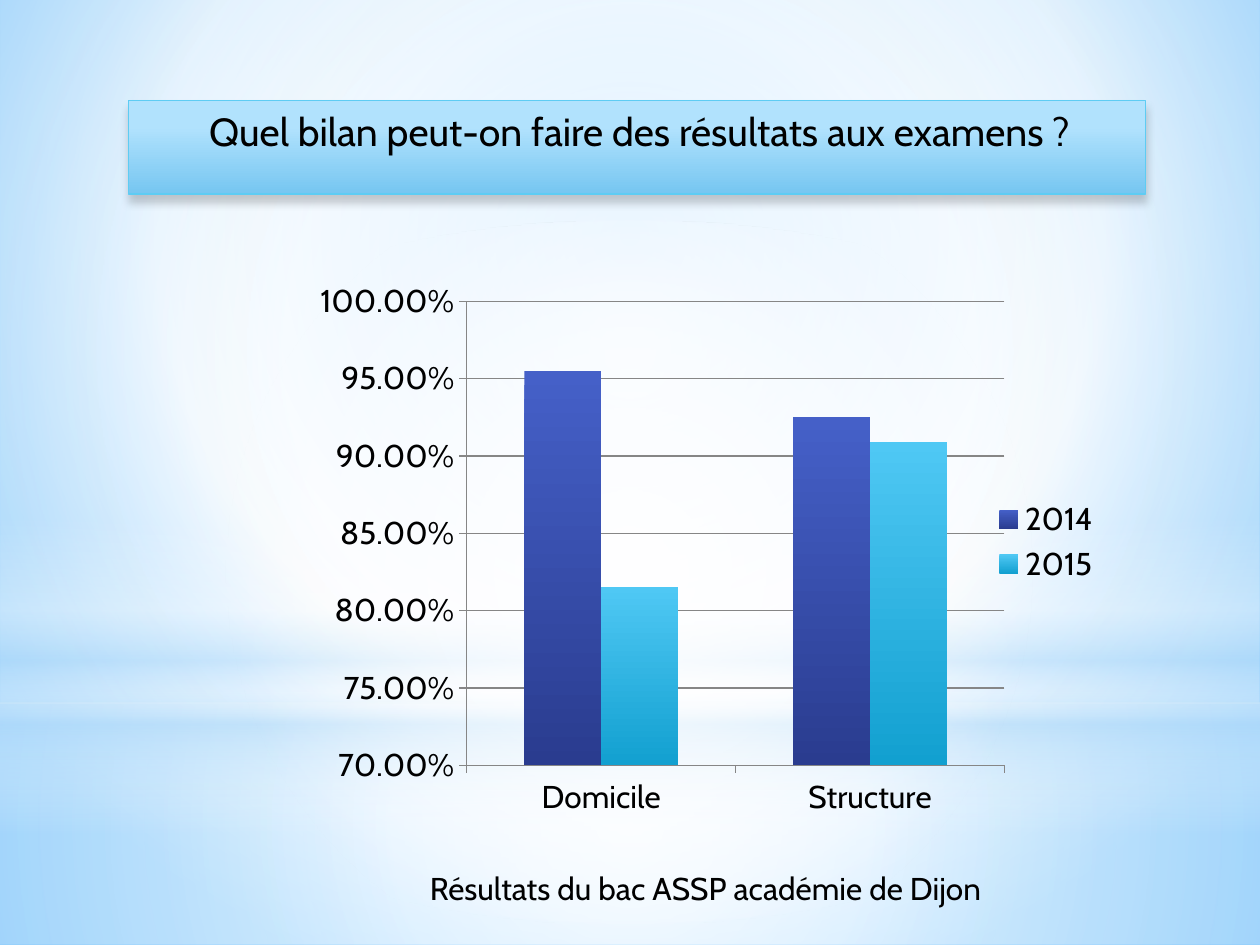
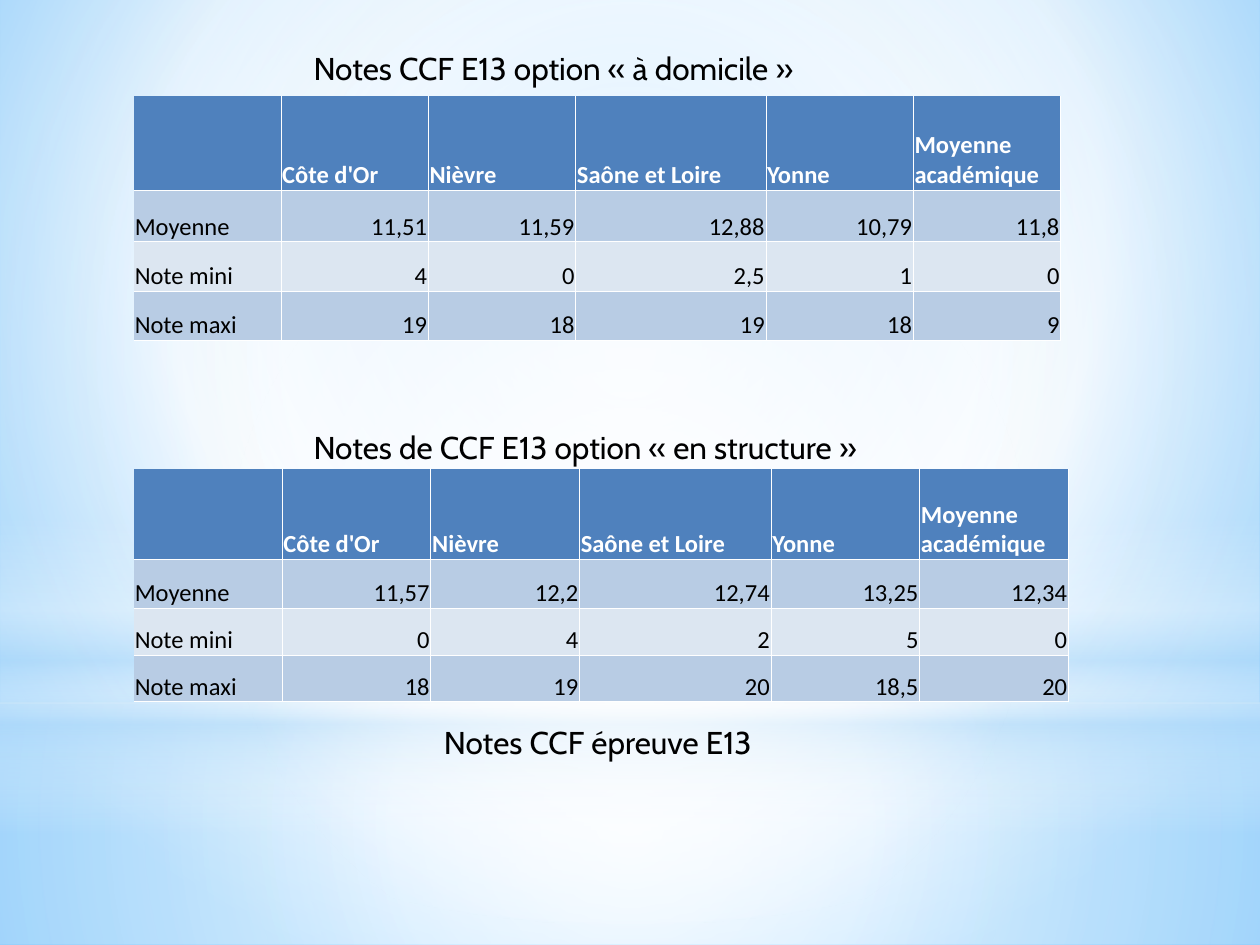
from lxml import etree
from pptx import Presentation
from pptx import util as u
from pptx.chart import data as cd
from pptx.dml.color import RGBColor
from pptx.enum import chart as ec, shapes, text
from pptx.oxml import parse_xml
from pptx.oxml.ns import nsdecls, qn

COLORS = dict(black="000000", white="FFFFFF", mist="B4DCFA", edge="5ECCF3",
              header="4F81BD", band="B8CCE4", pale="DCE6F1", grid="868686")
W, MIST = COLORS["white"], COLORS["mist"]
CENTRE = (50, 50, 50, 50)
BODY = dict(name="Cabin", size=u.Pt(18), bold=False)
CELL = dict(name="Calibri", size=u.Pt(14))
PLAIN_TABLE = "{2D5ABB26-0587-4C30-8999-92F81FD0307C}"

BACKDROP = [(0, "9ED5FF", 100), (60, W, 100), (100, "5BB9FF", 100)]
SCENERY = [
    ("RECTANGLE", (0, 5.58, 10, 1.92), [(0, W, 91), (37, W, 76), (100, MIST, 79)], CENTRE),
    ("RECTANGLE", (0, 0, 10, 5.58), [(0, W, 89), (48, W, 62), (100, MIST, 79)], CENTRE),
    ("RECTANGLE", (0, 4.12, 10, 2.5),
     [(0, W, 0), (29, W, 30), (45, MIST, 40), (55, W, 26), (65, MIST, 60), (100, W, 0)], None),
    ("OVAL", (0, 1.75, 10, 5.58), [(0, W, 100), (56, W, 0)], CENTRE),
]
BANNER = [(28, "B1E2FD", 100), (100, "76C6F1", 100)]
SERIES = [
    ("2014", (0.955, 0.925), [(0, "4560C8", 100), (100, "2A3C8F", 100)]),
    ("2015", (0.815, 0.909), [(0, "4FC8F4", 100), (100, "12A0D0", 100)]),
]

HEADS = ["", "Côte d'Or", "Nièvre", "Saône et Loire", "Yonne", "Moyenne académique"]
HOME_MARKS = [
    HEADS,
    ["Moyenne", "11,51", "11,59", "12,88", "10,79", "11,8"],
    ["Note mini", "4", "0", "2,5", "1", "0"],
    ["Note maxi", "19", "18", "19", "18", "9"],
]
CENTRE_MARKS = [
    HEADS,
    ["Moyenne", "11,57", "12,2", "12,74", "13,25", "12,34"],
    ["Note mini", "0", "4", "2", "5", "0"],
    ["Note maxi", "18", "19", "20", "18,5", "20"],
]


def box(values):
    return [u.Inches(v) for v in values]


def rgb(name):
    return RGBColor.from_string(COLORS[name])


def set_font(font, values, color="black"):
    for key, value in values.items():
        setattr(font, key, value)
    font.color.rgb = rgb(color)


def paint_gradient(fill, parent, stops, focus=None):
    fill.background()
    gs = "".join(f'<a:gs pos="{pos * 1000}"><a:srgbClr val="{color}">'
                 f'<a:alpha val="{alpha * 1000}"/></a:srgbClr></a:gs>'
                 for pos, color, alpha in stops)
    way = '<a:lin ang="5400000" scaled="0"/>'
    if focus:
        sides = " ".join(f'{k}="{v * 1000}"' for k, v in zip("ltrb", focus))
        way = f'<a:path path="circle"><a:fillToRect {sides}/></a:path>'
    grad = parse_xml(f'<a:gradFill {nsdecls("a")} rotWithShape="1">'
                     f'<a:gsLst>{gs}</a:gsLst>{way}</a:gradFill>')
    parent.replace(parent.find(qn("a:noFill")), grad)


def dress_master(prs, s):
    master = prs.slide_master
    fill = master.background.fill
    fill.background()
    bg = master.element.find(f".//{qn('p:bgPr')}")
    paint_gradient(fill, bg, BACKDROP, (20, 10, 20, 60))
    tree = master.shapes._spTree
    for i, (kind, at, stops, focus) in enumerate(SCENERY):
        sp = s.shapes.add_shape(shapes.MSO_SHAPE[kind], *box(at))
        sp.shadow.inherit = False
        sp.line.fill.background()
        paint_gradient(sp.fill, sp._element.spPr, stops, focus)
        sp._element.nvSpPr.cNvPr.set("id", str(100 + i))
        tree.insert(2 + i, sp._element)


def add_banner(s, words):
    sp = s.placeholders[1]
    sp.left, sp.top, sp.width, sp.height = box((1.02, 0.8, 8.07, 0.74))
    sp.line.color.rgb = rgb("edge")
    sp.line.width = u.Pt(0.75)
    paint_gradient(sp.fill, sp._element.spPr, BANNER)
    sp._element.spPr.append(parse_xml(
        f'<a:effectLst {nsdecls("a")}><a:outerShdw blurRad="63500" dist="50800" dir="5400000">'
        '<a:srgbClr val="000000"><a:alpha val="20000"/></a:srgbClr></a:outerShdw></a:effectLst>'))
    tf = sp.text_frame
    tf.auto_size = text.MSO_AUTO_SIZE.NONE
    tf.vertical_anchor = text.MSO_ANCHOR.TOP
    p = tf.paragraphs[0]
    p.alignment = text.PP_ALIGN.CENTER
    p.space_after = u.Pt(3)
    pPr = p._p.get_or_add_pPr()
    pPr.set("marL", str(u.Inches(0.05)))
    pPr.set("indent", "0")
    etree.SubElement(pPr, qn("a:buNone"))
    r = p.add_run()
    r.text = words
    set_font(r.font, {**BODY, "size": u.Pt(22.4)})


def add_caption(s, at, words, align="LEFT"):
    tf = s.shapes.add_textbox(*box(at)).text_frame
    tf.word_wrap = True
    tf.auto_size = text.MSO_AUTO_SIZE.SHAPE_TO_FIT_TEXT
    p = tf.paragraphs[0]
    p.alignment = text.PP_ALIGN[align]
    r = p.add_run()
    r.text = words
    set_font(r.font, BODY)


def place_plot(chart, x, y, w, h):
    area = chart._chartSpace.chart.plotArea
    for old in area.findall(qn("c:layout")):
        area.remove(old)
    sizes = "".join(f'<c:{k} val="{v}"/>' for k, v in zip("xywh", (x, y, w, h)))
    area.insert(0, parse_xml(
        f'<c:layout {nsdecls("c")}><c:manualLayout><c:layoutTarget val="inner"/>'
        f'<c:xMode val="edge"/><c:yMode val="edge"/>{sizes}</c:manualLayout></c:layout>'))


def add_results_chart(s, at):
    data = cd.CategoryChartData(number_format="0.00%")
    data.categories = ["Domicile", "Structure"]
    for name, values, _ in SERIES:
        data.add_series(name, values)
    chart = s.shapes.add_chart(ec.XL_CHART_TYPE.COLUMN_CLUSTERED, *box(at), data).chart
    set_font(chart.font, BODY)
    chart.has_title = False
    chart.has_legend = True
    chart.legend.position = ec.XL_LEGEND_POSITION.RIGHT
    chart.legend.include_in_layout = False
    plot = chart.plots[0]
    plot.vary_by_categories = False
    plot.gap_width, plot.overlap = 150, 0
    for ser, (_, _, stops) in zip(plot.series, SERIES):
        fill = ser.format.fill
        fill.background()
        paint_gradient(fill, ser._element.find(qn("c:spPr")), stops)
    axis = chart.value_axis
    limits = dict(minimum_scale=0.7, maximum_scale=1, major_unit=0.05, has_major_gridlines=True)
    for key, value in limits.items():
        setattr(axis, key, value)
    axis.tick_labels.number_format = "0.00%"
    axis.tick_labels.number_format_is_linked = False
    for part in (axis, axis.major_gridlines, chart.category_axis):
        part.format.line.color.rgb = rgb("grid")
        part.format.line.width = u.Pt(0.75)
    for ax in (axis, chart.category_axis):
        ax.major_tick_mark = ec.XL_TICK_MARK.OUTSIDE
    place_plot(chart, 0.23, 0.07, 0.64, 0.83)


def add_borders(cell, sides):
    tcPr = cell._tc.get_or_add_tcPr()
    for i, side in enumerate(sides):
        tcPr.insert(i, parse_xml(
            f'<a:ln{side} {nsdecls("a")} w="6350"><a:solidFill>'
            f'<a:srgbClr val="{W}"/></a:solidFill></a:ln{side}>'))


def fill_mark(cell, words, row, col, last_row, last_col):
    cell.fill.solid()
    cell.fill.fore_color.rgb = rgb("header" if row == 0 else "band" if row % 2 else "pale")
    inner = dict(L=col > 0, R=col < last_col, T=row > 0, B=row < last_row)
    add_borders(cell, [side for side, shown in inner.items() if shown])
    p = cell.text_frame.paragraphs[0]
    if row and col:
        p.alignment = text.PP_ALIGN.RIGHT
    if words:
        r = p.add_run()
        r.text = words
        set_font(r.font, {**CELL, "bold": row == 0}, "black" if row else "white")


def add_marks_table(s, top, col, wide, heights, marks):
    widths = [col] * 3 + [wide] + [col] * 3
    frame = s.shapes.add_table(len(heights), len(widths), *box(
        (1.06, top, sum(widths), sum(heights))))
    table = frame.table
    table.first_row = table.horz_banding = False
    table._tbl.tblPr.find(qn("a:tableStyleId")).text = PLAIN_TABLE
    for column, width in zip(table.columns, widths):
        column.width = u.Inches(width)
    for row, height in zip(table.rows, heights):
        row.height = u.Inches(height)
    for cell in table.iter_cells():
        cell.margin_left = cell.margin_right = cell.margin_top = u.Inches(0.01)
        cell.margin_bottom = 0
        cell.vertical_anchor = text.MSO_ANCHOR.BOTTOM
    for i, line in enumerate(marks):
        for j, words in enumerate(line):
            fill_mark(table.cell(i + 1, j), words, i, j, len(marks) - 1, len(line) - 1)


def main():
    prs = Presentation()
    prs.slide_width, prs.slide_height = box((10, 7.5))

    s = prs.slides.add_slide(prs.slide_layouts[1])
    dress_master(prs, s)
    title = s.shapes.title._element
    title.getparent().remove(title)
    add_banner(s, "Quel bilan peut-on faire des résultats aux examens ?")
    add_results_chart(s, (2.17, 2.08, 6.67, 4.44))
    add_caption(s, (2.37, 6.85, 6.46, 0.4), "Résultats du bac ASSP académie de Dijon", "CENTER")

    s = prs.slides.add_slide(prs.slide_layouts[6])
    add_caption(s, (1.46, 5.69, 6.57, 0.4), "Notes CCF épreuve E13", "CENTER")
    add_caption(s, (2.39, 0.34, 5.24, 0.4), "Notes CCF E13 option « à domicile »")
    add_marks_table(s, 0.37, 1.17, 1.51, [0.39, 0.75, 0.41, 0.39, 0.39, 0.39], HOME_MARKS)
    add_marks_table(s, 3.35, 1.18, 1.52, [0.37, 0.72, 0.39, 0.37, 0.37, 0.37], CENTRE_MARKS)
    add_caption(s, (2.39, 3.35, 4.94, 0.4), "Notes de CCF E13 option « en structure »")

    prs.save("out.pptx")


if __name__ == "__main__":
    main()
